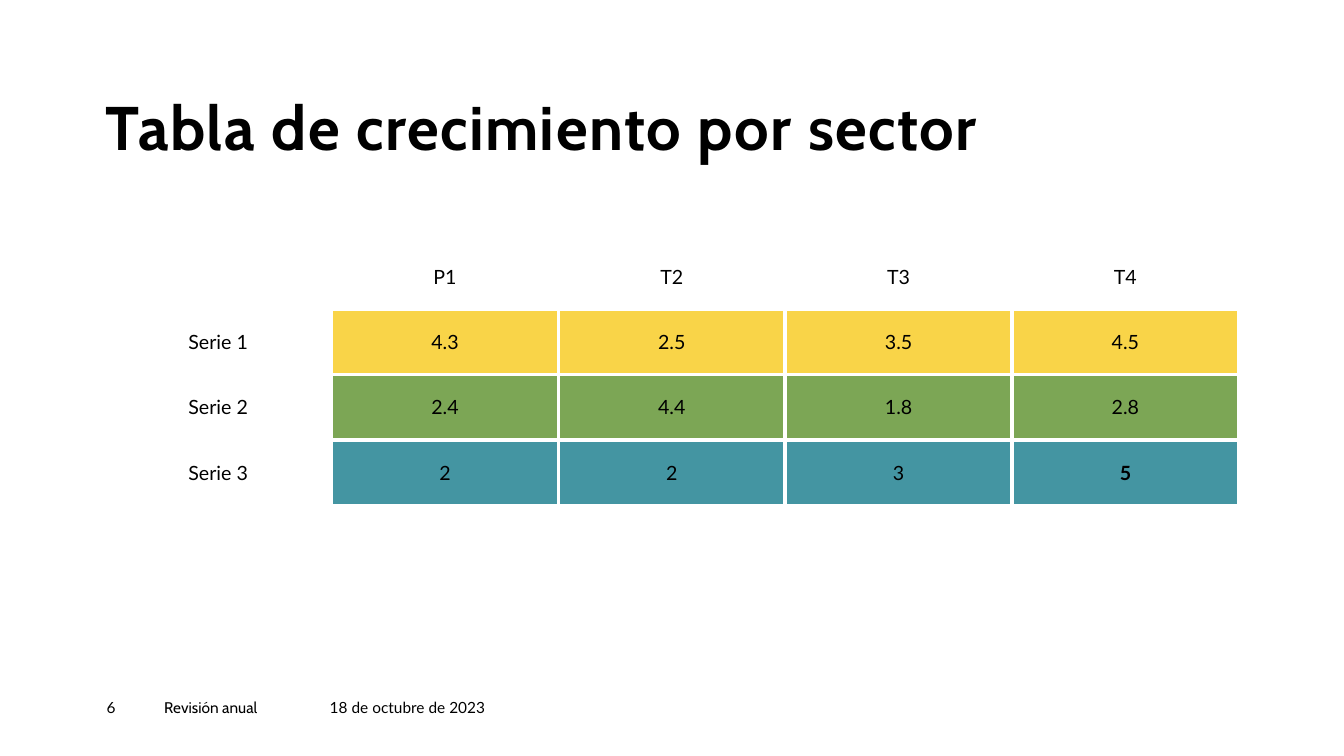
"""Builds a slide with a table of growth by sector."""
import dataclasses

import pptx
import pptx.dml.color
import pptx.enum.text
import pptx.oxml
import pptx.oxml.ns
import pptx.util

Cm = pptx.util.Cm
Pt = pptx.util.Pt
ANCHOR = pptx.enum.text.MSO_ANCHOR
ALIGN = pptx.enum.text.PP_ALIGN


@dataclasses.dataclass(frozen=True)
class Theme:
    heading_font: str = "Cabin"
    body_font: str = "Lato"
    text: str = "000000"
    border: str = "FFFFFF"
    series: tuple = ("F9D448", "7CA655", "4495A2")
    title_size: int = 44
    table_size: int = 14
    footer_size: int = 11
    header_line: float = 1
    outer_line: float = 2.25
    inner_line: float = 3


THEME = Theme()
TITLE = "Tabla de crecimiento por sector"
ROWS = [
    ("", "P1", "T2", "T3", "T4"),
    ("Serie 1", "4.3", "2.5", "3.5", "4.5"),
    ("Serie 2", "2.4", "4.4", "1.8", "2.8"),
    ("Serie 3", "2", "2", "3", "5"),
]
FOOTER = [
    ("6", 1.45, THEME.body_font),
    ("Revisión anual", 4.17, THEME.heading_font),
    ("18 de octubre de 2023", 5.44, THEME.body_font),
]
TABLE_LEFT, TABLE_TOP, TABLE_WIDTH, TABLE_HEIGHT = 2.64, 6.15, 28.58, 6.58
FOOTER_LEFT, FOOTER_TOP, FOOTER_HEIGHT = 2.69, 17.58, 0.69


def write(frame, text, font, size, bold=False):
    frame.text = text
    para = frame.paragraphs[0]
    for span in para.runs:
        span.font.name = font
        span.font.size = Pt(size)
        span.font.bold = bold
        span.font.color.rgb = pptx.dml.color.RGBColor.from_string(THEME.text)
    return para


def clear_margins(frame):
    frame.margin_left = frame.margin_top = frame.margin_right = frame.margin_bottom = 0
    frame.word_wrap = True


def border_widths(row, column):
    """Returns the left, right, top and bottom line widths of a cell."""
    thin, outer, inner = THEME.header_line, THEME.outer_line, THEME.inner_line
    if row == 0:
        return thin, thin, thin, outer
    if column == 0:
        return (outer,) * 4
    return (
        inner if column > 1 else outer,
        inner if column < len(ROWS[0]) - 1 else outer,
        inner if row > 1 else outer,
        inner if row < len(ROWS) - 1 else outer,
    )


def add_borders(cell, widths):
    properties = cell._tc.get_or_add_tcPr()
    for side, width in zip("LRTB", widths):
        properties.append(pptx.oxml.parse_xml(
            f'<a:ln{side} {pptx.oxml.ns.nsdecls("a")} w="{int(Pt(width))}">'
            f'<a:solidFill><a:srgbClr val="{THEME.border}"/></a:solidFill></a:ln{side}>'
        ))


def add_title(page):
    title = page.shapes.title
    title.left, title.top, title.width, title.height = Cm(2.67), Cm(2.44), Cm(23.5), Cm(1.7)
    frame = title.text_frame
    clear_margins(frame)
    frame.auto_size = pptx.enum.text.MSO_AUTO_SIZE.NONE
    frame.vertical_anchor = ANCHOR.BOTTOM
    para = write(frame, TITLE, THEME.heading_font, THEME.title_size, True)
    para.alignment = ALIGN.LEFT
    para.line_spacing = 0.9
    para.runs[0]._r.get_or_add_rPr().set("spc", "100")


def add_growth_table(page):
    table = page.shapes.add_table(
        len(ROWS), len(ROWS[0]),
        Cm(TABLE_LEFT), Cm(TABLE_TOP), Cm(TABLE_WIDTH), Cm(TABLE_HEIGHT),
    ).table
    table.first_row = table.horz_banding = False
    for row, values in enumerate(ROWS):
        for column, value in enumerate(values):
            cell = table.cell(row, column)
            cell.vertical_anchor = ANCHOR.MIDDLE
            is_total = row == len(ROWS) - 1 and column == len(values) - 1
            para = write(cell.text_frame, value, THEME.body_font, THEME.table_size, is_total)
            para.alignment = ALIGN.CENTER
            add_borders(cell, border_widths(row, column))
            if row and column:
                cell.fill.solid()
                cell.fill.fore_color.rgb = pptx.dml.color.RGBColor.from_string(THEME.series[row - 1])
            else:
                cell.fill.background()


def add_footer(page):
    left = FOOTER_LEFT
    for text, width, font in FOOTER:
        box = page.shapes.add_textbox(Cm(left), Cm(FOOTER_TOP), Cm(width), Cm(FOOTER_HEIGHT))
        clear_margins(box.text_frame)
        write(box.text_frame, text, font, THEME.footer_size)
        left += width


def main():
    deck = pptx.Presentation()
    deck.slide_width, deck.slide_height = Cm(33.87), Cm(19.05)
    page = deck.slides.add_slide(deck.slide_layouts[5])
    add_title(page)
    add_growth_table(page)
    add_footer(page)
    deck.save("out.pptx")


if __name__ == "__main__":
    main()
